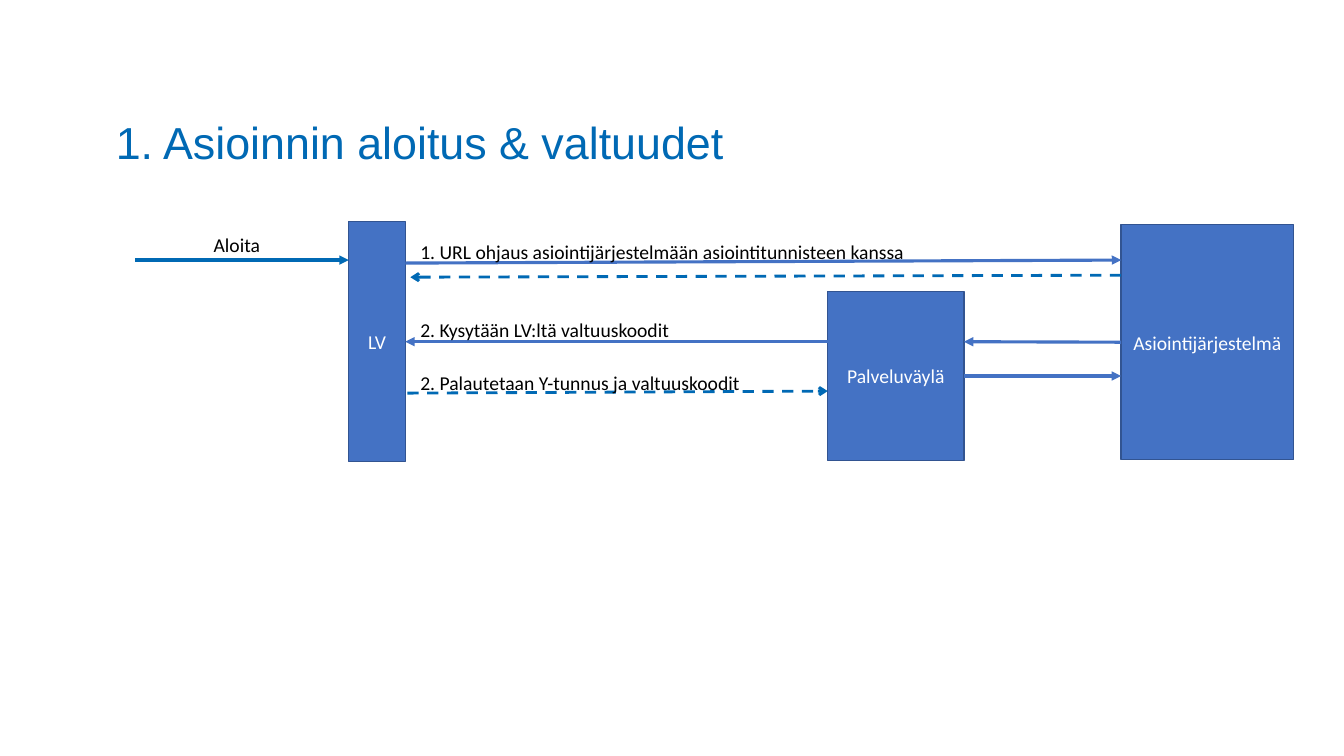
"""Build the slide on starting a service transaction and its mandates."""
from lxml import etree
from pptx import Presentation
from pptx.dml.color import RGBColor
from pptx.enum.dml import MSO_LINE
from pptx.enum.shapes import MSO_CONNECTOR, MSO_SHAPE
from pptx.enum.text import MSO_ANCHOR, PP_ALIGN
from pptx.oxml.ns import qn
from pptx.util import Inches, Pt

STRAIGHT = MSO_CONNECTOR.STRAIGHT
RECTANGLE = MSO_SHAPE.RECTANGLE
DASH = MSO_LINE.DASH
MIDDLE, TOP = MSO_ANCHOR.MIDDLE, MSO_ANCHOR.TOP
CENTER = PP_ALIGN.CENTER

BLUE = RGBColor(0x44, 0x72, 0xC4)
OUTLINE = RGBColor(0x32, 0x54, 0x91)
DEEP_BLUE = RGBColor(0x00, 0x69, 0xB4)
BLACK = RGBColor(0, 0, 0)
WHITE = RGBColor(0xFF, 0xFF, 0xFF)

LEFT_SIDE, RIGHT_SIDE = 1, 3


def style_text(paragraph, text, color, font="Calibri", size=14):
    """Fill a paragraph with text in one font."""
    paragraph.text = text
    paragraph.font.name = font
    paragraph.font.size = Pt(size)
    paragraph.font.color.rgb = color


def add_system(slide, name, left, top, width, height):
    """Add a system as a blue box with its name in the middle."""
    system = slide.shapes.add_shape(
        RECTANGLE, Inches(left), Inches(top), Inches(width), Inches(height))
    system.shadow.inherit = False
    system.fill.solid()
    system.fill.fore_color.rgb = BLUE
    system.line.color.rgb = OUTLINE
    system.line.width = Pt(1)
    frame = system.text_frame
    frame.word_wrap = True
    frame.vertical_anchor = MIDDLE
    style_text(frame.paragraphs[0], name, WHITE)
    frame.paragraphs[0].alignment = CENTER
    return system


def add_label(slide, text, left, top, width, height=0.34, anchor=TOP):
    """Add a wrapped text box and return its paragraph."""
    label = slide.shapes.add_textbox(
        Inches(left), Inches(top), Inches(width), Inches(height))
    label.text_frame.word_wrap = True
    label.text_frame.vertical_anchor = anchor
    style_text(label.text_frame.paragraphs[0], text, BLACK)
    return label.text_frame.paragraphs[0]


def add_message(slide, start, end, color=BLUE, reply=False):
    """Add a solid arrow for a request or a dashed one for a reply."""
    message = slide.shapes.add_connector(
        STRAIGHT, *(Inches(value) for value in (*start, *end)))
    message.line.color.rgb = color
    message.line.width = Pt(2 if reply else 2.25)
    if reply:
        message.line.dash_style = DASH
    outline = message.line._get_or_add_ln()
    etree.SubElement(outline, qn("a:tailEnd"), type="arrow" if reply else "triangle")
    etree.SubElement(message._element.spPr, qn("a:effectLst"))
    return message


def main():
    """Build and save the slide."""
    presentation = Presentation()
    presentation.slide_width = Inches(13.33)
    presentation.slide_height = Inches(7.5)
    slide = presentation.slides.add_slide(presentation.slide_layouts[6])

    title = add_label(slide, "1. Asioinnin aloitus & valtuudet", 1.05, 0.93, 10, 1.01, MIDDLE)
    style_text(title, title.text, DEEP_BLUE, "Arial", 32)
    title.line_spacing = 0.9

    service = add_system(slide, "Asiointijärjestelmä", 11.12, 2.23, 1.71, 2.33)
    bus = add_system(slide, "Palveluväylä", 8.21, 2.89, 1.35, 1.68)
    lv = add_system(slide, "LV", 3.46, 2.2, 0.56, 2.38)

    add_message(slide, (1.34, 2.58), (3.46, 2.58), DEEP_BLUE)
    add_message(slide, (4.02, 2.61), (11.12, 2.58))
    add_message(slide, (11.12, 2.73), (4.07, 2.75), DEEP_BLUE, reply=True)
    query = add_message(slide, (8.21, 3.39), (4.02, 3.39))
    query.end_connect(lv, RIGHT_SIDE)
    add_message(slide, (4.04, 3.9), (8.21, 3.88), DEEP_BLUE, reply=True)
    bus_query = add_message(slide, (11.12, 3.39), (9.56, 3.39))
    bus_query.begin_connect(service, LEFT_SIDE)
    bus_reply = add_message(slide, (9.56, 3.73), (11.12, 3.73))
    bus_reply.begin_connect(bus, RIGHT_SIDE)

    add_label(slide, "Aloita", 2.02, 2.26, 0.68)
    add_label(slide, "1. URL ohjaus asiointijärjestelmään asiointitunnisteen kanssa",
              4.07, 2.33, 6.69)
    add_label(slide, "2. Kysytään LV:ltä valtuuskoodit", 4.07, 3.1, 3.34, 0.57)
    add_label(slide, "2. Palautetaan Y-tunnus ja valtuuskoodit", 4.07, 3.63, 4.09)

    presentation.save("out.pptx")


if __name__ == "__main__":
    main()
